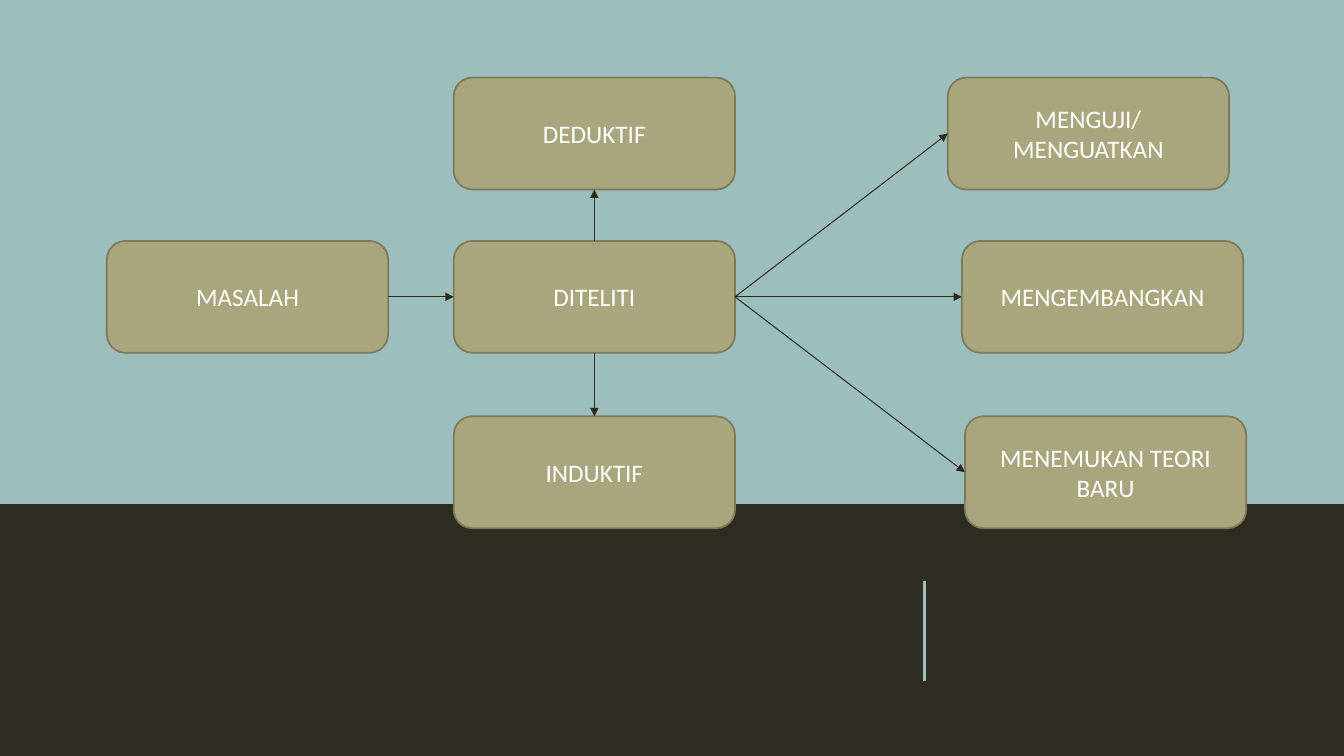
from dataclasses import dataclass

from pptx import Presentation, util as u
from pptx.dml.color import RGBColor
from pptx.enum import shapes as sh, text as tx
from pptx.oxml.ns import qn
from lxml import etree

PX = 9144
WIDE, HIGH = 279, 111
TOP, LEFT, BASE, RIGHT = range(4)
INK = {
    "dark": "2E2B21",
    "sky": "9CBEBD",
    "box": "A9A57C",
    "edge": "7D7A5C",
    "text": "FFFFFF",
}


@dataclass
class Box:
    key: str
    label: str
    x: int
    y: int


@dataclass
class Link:
    start: str
    out: int
    end: str
    into: int


ROWS = (77, 239, 413)
BOXES = [
    Box("issue", "MASALAH", 106, ROWS[1]),
    Box("deduct", "DEDUKTIF", 450, ROWS[0]),
    Box("study", "DITELITI", 450, ROWS[1]),
    Box("induct", "INDUKTIF", 450, ROWS[2]),
    Box("test", "MENGUJI/ MENGUATKAN", 940, ROWS[0]),
    Box("grow", "MENGEMBANGKAN", 954, ROWS[1]),
    Box("find", "MENEMUKAN TEORI BARU", 957, ROWS[2]),
]
LINKS = [
    Link("study", RIGHT, "test", LEFT),
    Link("study", RIGHT, "grow", LEFT),
    Link("study", RIGHT, "find", LEFT),
    Link("issue", RIGHT, "study", LEFT),
    Link("study", TOP, "deduct", BASE),
    Link("study", BASE, "induct", TOP),
]


def px(n: int) -> u.Emu:
    return u.Emu(n * PX)


def tint(name: str) -> RGBColor:
    return RGBColor.from_string(INK[name])


def add_line(slide, ends: tuple[int, int, int, int], ink: str, size: float):
    line = slide.shapes.add_connector(
        sh.MSO_CONNECTOR.STRAIGHT, *(px(n) for n in ends))
    line.line.color.rgb = tint(ink)
    line.line.width = u.Pt(size)
    etree.SubElement(line._element.spPr, qn("a:effectLst"))
    return line


def add_box(slide, box: Box):
    shape = slide.shapes.add_shape(
        sh.MSO_SHAPE.ROUNDED_RECTANGLE,
        px(box.x), px(box.y), px(WIDE), px(HIGH))
    shape.shadow.inherit = False
    shape.fill.solid()
    shape.fill.fore_color.rgb = tint("box")
    shape.line.color.rgb = tint("edge")
    shape.line.width = u.Pt(1.25)
    frame = shape.text_frame
    frame.word_wrap = True
    frame.vertical_anchor = tx.MSO_ANCHOR.MIDDLE
    para = frame.paragraphs[0]
    para.alignment = tx.PP_ALIGN.CENTER
    run = para.add_run()
    run.text = box.label
    run.font.name = "Calibri"
    run.font.size = u.Pt(18)
    run.font.color.rgb = tint("text")
    return shape


def add_link(slide, link: Link, nodes: dict) -> None:
    line = add_line(slide, (0, 0, 0, 0), "dark", 0.75)
    line.begin_connect(nodes[link.start], link.out)
    line.end_connect(nodes[link.end], link.into)
    etree.SubElement(line.line._get_or_add_ln(), qn("a:tailEnd"), type="triangle")


def main() -> None:
    deck = Presentation()
    deck.slide_width, deck.slide_height = px(1333), px(750)
    slide = deck.slides.add_slide(deck.slide_layouts[6])
    back = slide.background.fill
    back.solid()
    back.fore_color.rgb = tint("dark")

    add_line(slide, (917, 676, 917, 576), "sky", 1.5)
    band = slide.shapes.add_shape(
        sh.MSO_SHAPE.RECTANGLE, 0, 0, deck.slide_width, px(500))
    band.shadow.inherit = False
    band.fill.solid()
    band.fill.fore_color.rgb = tint("sky")
    band.line.fill.background()

    nodes = {box.key: add_box(slide, box) for box in BOXES}
    for link in LINKS:
        add_link(slide, link, nodes)
    deck.save("out.pptx")


if __name__ == "__main__":
    main()
